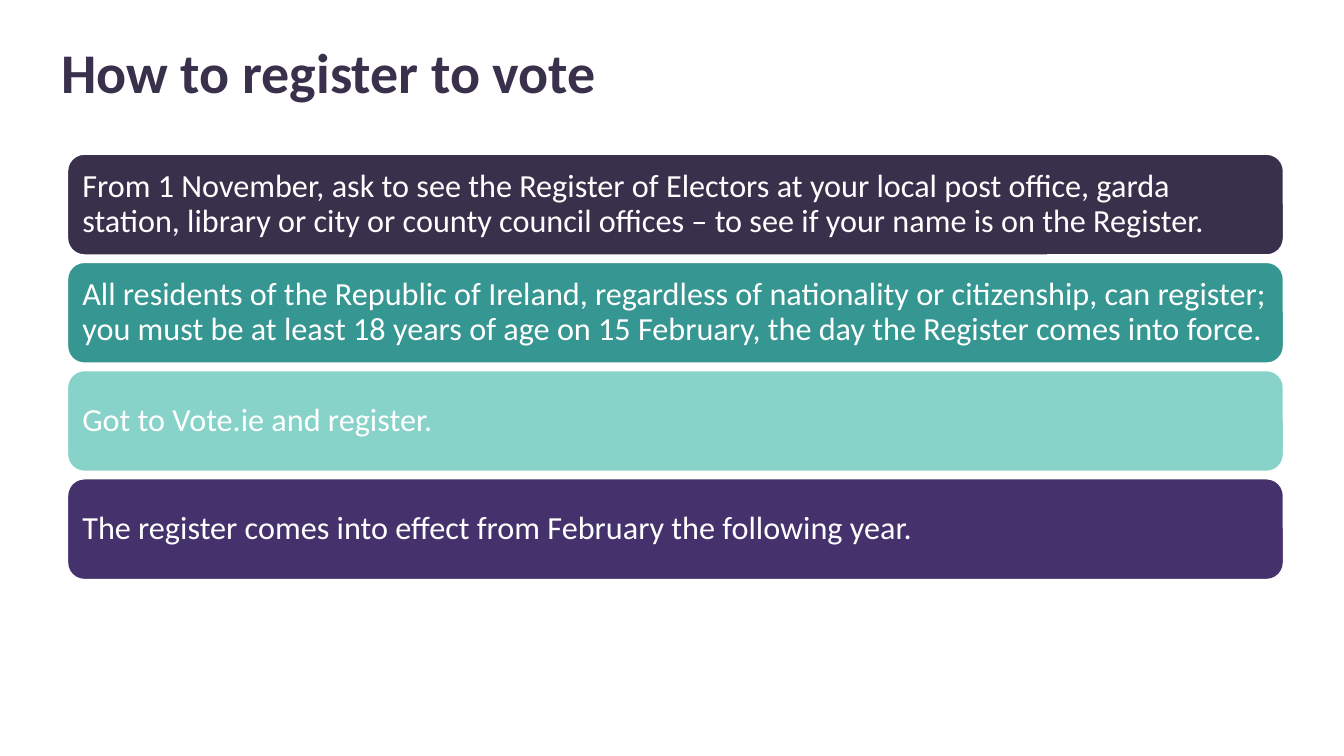
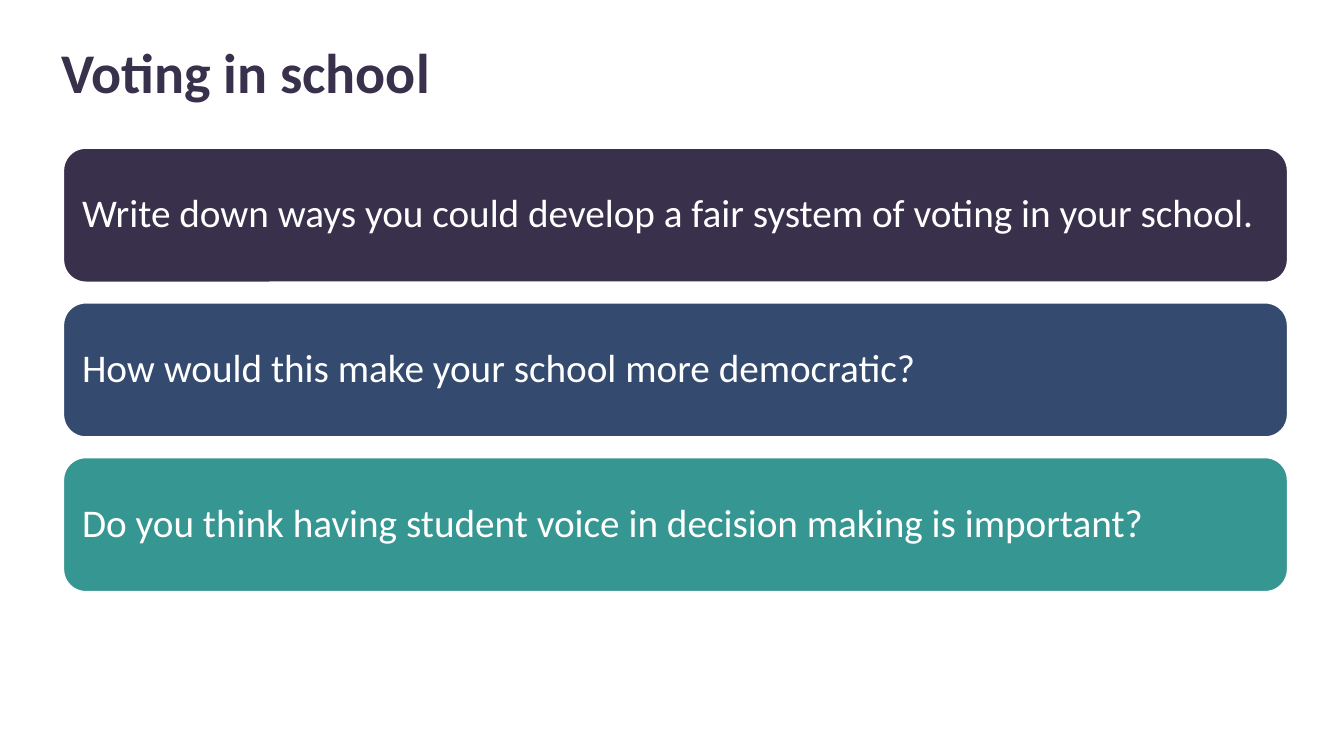
"""Build two slides about registering to vote and voting in school."""
from pptx import Presentation
from pptx.dml.color import RGBColor
from pptx.enum.shapes import MSO_SHAPE as SHAPE
from pptx.enum.text import MSO_ANCHOR as ANCHOR, PP_ALIGN as ALIGN
from pptx.util import Emu, Pt

FONT = "Calibri"
DARK, BLUE, TEAL, MINT, PURPLE, WHITE = (
    "39304C", "354A6F", "369691", "87D3C9", "45326C", "FFFFFF")
TITLE_BOX = (51, 40, 1150, 68)

SLIDES = [
    {
        "title": "How to register to vote",
        "left": 67, "width": 1206, "top": 153, "bottom": 575,
        "height": 100, "inset": 10, "size": 23,
        "cards": [
            (DARK, "From 1 November, ask to see the Register of Electors at your local "
                   "post office, garda station, library or city or county council "
                   "offices – to see if your name is on the Register."),
            (TEAL, "All residents of the Republic of Ireland, regardless of nationality "
                   "or citizenship, can register; you must be at least 18 years of age "
                   "on 15 February, the day the Register comes into force."),
            (MINT, "Got to Vote.ie and register."),
            (PURPLE, "The register comes into effect from February the following year."),
        ],
    },
    {
        "title": "Voting in school",
        "left": 63, "width": 1214, "top": 147, "bottom": 587,
        "height": 133, "inset": 12, "size": 28,
        "cards": [
            (DARK, "Write down ways you could develop a fair system of voting in your school."),
            (BLUE, "How would this make your school more democratic?"),
            (TEAL, "Do you think having student voice in decision making is important?"),
        ],
    },
]


def px(n):
    return Emu(round(n * 9144))


def rgb(color):
    return RGBColor.from_string(color)


def write(tf, text, size, color, bold=False):
    tf.word_wrap = True
    tf.text = text
    p = tf.paragraphs[0]
    p.alignment = ALIGN.LEFT
    p.line_spacing = 0.9
    font = p.runs[0].font
    font.name, font.size, font.bold = FONT, Pt(size), bold
    font.color.rgb = rgb(color)


def add_title(s, text):
    box = s.shapes.add_textbox(*map(px, TITLE_BOX))
    write(box.text_frame, text, 40, DARK, bold=True)


def add_card(s, box, fill, text, inset, size):
    sp = s.shapes.add_shape(SHAPE.ROUNDED_RECTANGLE, *map(px, box))
    sp.shadow.inherit = False
    sp.fill.solid()
    sp.fill.fore_color.rgb = rgb(fill)
    sp.line.color.rgb = rgb(WHITE)
    sp.line.width = Pt(1)
    tf = sp.text_frame
    tf.margin_left = tf.margin_right = tf.margin_top = tf.margin_bottom = px(inset)
    tf.vertical_anchor = ANCHOR.MIDDLE
    write(tf, text, size, WHITE)


def add_slide(prs, d):
    s = prs.slides.add_slide(prs.slide_layouts[6])
    add_title(s, d["title"])
    pitch = (d["bottom"] - d["top"] - d["height"]) / (len(d["cards"]) - 1)
    for i, (fill, text) in enumerate(d["cards"]):
        box = (d["left"], d["top"] + i * pitch, d["width"], d["height"])
        add_card(s, box, fill, text, d["inset"], d["size"])


def main():
    prs = Presentation()
    prs.slide_width, prs.slide_height = px(1333), px(750)
    for d in SLIDES:
        add_slide(prs, d)
    prs.save("out.pptx")


if __name__ == "__main__":
    main()
